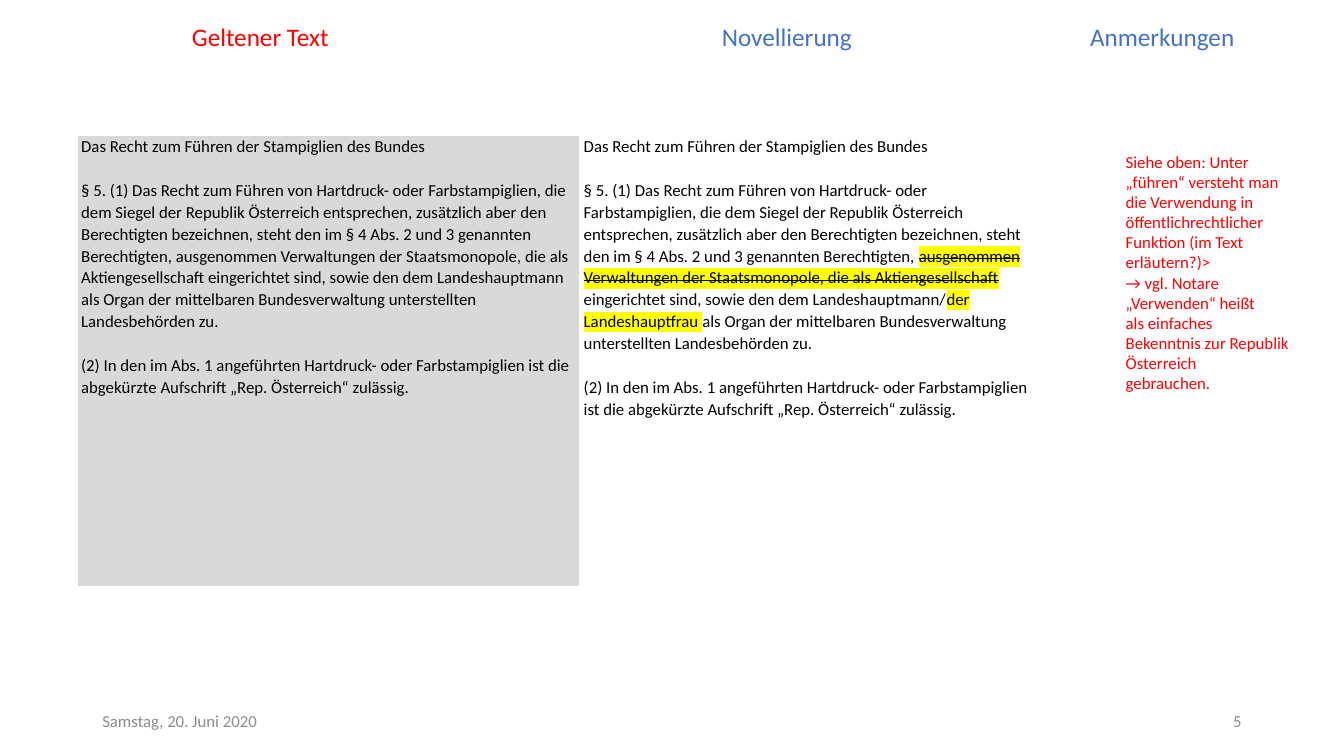
from lxml import etree
from pptx import Presentation
from pptx.dml.color import RGBColor
from pptx.enum.text import MSO_ANCHOR, PP_ALIGN
from pptx.oxml.ns import qn
from pptx.util import Pt

LEFT, RIGHT = PP_ALIGN.LEFT, PP_ALIGN.RIGHT
TOP, MIDDLE = MSO_ANCHOR.TOP, MSO_ANCHOR.MIDDLE

FONT = "Calibri"
BLACK, WHITE, RED, BLUE = "000000", "FFFFFF", "FF0000", "4472C4"
GREY_TEXT, GREY_FILL, YELLOW = "8C8C8C", "D9D9D9", "FFFF00"

TITLE = "Das Recht zum Führen der Stampiglien des Bundes"
RIGHT_HOLDERS = (
    "§ 5. (1) Das Recht zum Führen von Hartdruck- oder Farbstampiglien, die dem "
    "Siegel der Republik Österreich entsprechen, zusätzlich aber den Berechtigten "
    "bezeichnen, steht den im § 4 Abs. 2 und 3 genannten Berechtigten, "
)
EXCEPTION = "ausgenommen Verwaltungen der Staatsmonopole, die als Aktiengesellschaft "
GOVERNOR = "eingerichtet sind, sowie den dem Landeshauptmann"
AUTHORITIES = (
    "als Organ der mittelbaren Bundesverwaltung unterstellten Landesbehörden zu."
)
INSCRIPTION = (
    "(2) In den im Abs. 1 angeführten Hartdruck- oder Farbstampiglien ist die "
    "abgekürzte Aufschrift „Rep. Österreich“ zulässig."
)

# Each paragraph is a list of (text, style) spans.
CURRENT_LAW = [
    [(TITLE, {})],
    [(f"{RIGHT_HOLDERS}{EXCEPTION}{GOVERNOR} {AUTHORITIES}", {})],
    [(INSCRIPTION, {})],
]
AMENDED_LAW = [
    [(TITLE, {})],
    [
        (RIGHT_HOLDERS, {}),
        (EXCEPTION, {"strike": True, "highlight": YELLOW}),
        (f"{GOVERNOR}/", {}),
        ("der Landeshauptfrau ", {"highlight": YELLOW}),
        (AUTHORITIES, {}),
    ],
    [(INSCRIPTION, {})],
]
HEADINGS = [[
    ("Geltener Text\t", {"size": 18, "color": RED}),
    ("Novellierung\tAnmerkungen", {"size": 18, "color": BLUE}),
]]
REMARKS = [
    "Siehe oben: Unter „führen“ versteht man die Verwendung in "
    "öffentlichrechtlicher Funktion (im Text erläutern?)>\n→ vgl. Notare",
    "„Verwenden“ heißt",
    "als einfaches Bekenntnis zur Republik Österreich \ngebrauchen.",
]


def rgb(color):
    return RGBColor.from_string(color)


def add_color(parent, tag, color):
    """Append a DrawingML element that holds one RGB colour."""
    holder = etree.SubElement(parent, qn(tag))
    etree.SubElement(holder, qn("a:srgbClr"), val=color)


def add_span(para, text, size=12, color=BLACK, strike=False, highlight=None):
    """Add a run; each newline in it becomes a line break of the same size."""
    for index, line in enumerate(text.split("\n")):
        if index:
            para.add_line_break()
            etree.SubElement(para._p[-1], qn("a:rPr"), sz=str(size * 100))
        span = para.add_run()
        span.text = line
        span.font.size = Pt(size)
        span.font.color.rgb = rgb(color)
        properties = span._r.get_or_add_rPr()
        if strike:
            properties.set("strike", "sngStrike")
        if highlight:
            add_color(properties, "a:highlight", highlight)
        span.font.name = FONT


def fill_text(frame, paragraphs, align=LEFT, line_spacing=None, gap=0):
    for index, spans in enumerate(paragraphs):
        para = frame.add_paragraph() if index else frame.paragraphs[0]
        para.alignment = align
        if line_spacing:
            para.line_spacing = line_spacing
        if index and gap:
            para.space_before = Pt(gap)
        for text, style in spans:
            add_span(para, text, **style)


def add_text(page, left, top, width, height, paragraphs, align=LEFT, anchor=TOP):
    box = page.shapes.add_textbox(Pt(left), Pt(top), Pt(width), Pt(height))
    box.text_frame.word_wrap = True
    box.text_frame.vertical_anchor = anchor
    fill_text(box.text_frame, paragraphs, align)
    return box


def add_tab_stops(para, positions):
    tabs = etree.SubElement(para._p.get_or_add_pPr(), qn("a:tabLst"))
    for position in positions:
        etree.SubElement(tabs, qn("a:tab"), pos=str(Pt(position)), algn="l")


def style_cell(cell, fill=None):
    properties = cell._tc.get_or_add_tcPr()
    for side in "LRTB":
        border = etree.SubElement(properties, qn(f"a:ln{side}"), w=str(Pt(1)))
        add_color(border, "a:solidFill", WHITE)
    if fill:
        cell.fill.solid()
        cell.fill.fore_color.rgb = rgb(fill)
    else:
        cell.fill.background()


def add_law_table(page):
    widths, heights = (359, 326), (102, 322.5)
    table = page.shapes.add_table(
        2, 2, Pt(55), Pt(-5.5), Pt(sum(widths)), Pt(sum(heights))
    ).table
    table.first_row = table.horz_banding = False
    for column, width in zip(table.columns, widths):
        column.width = Pt(width)
    for row, height in zip(table.rows, heights):
        row.height = Pt(height)
    for column, (law, fill) in enumerate(
        [(CURRENT_LAW, GREY_FILL), (AMENDED_LAW, None)]
    ):
        style_cell(table.cell(0, column))
        cell = table.cell(1, column)
        style_cell(cell, fill)
        cell.margin_left = cell.margin_right = Pt(3)
        cell.margin_top = cell.margin_bottom = 0
        fill_text(cell.text_frame, law, line_spacing=1.07, gap=15.7)


def main():
    deck = Presentation()
    deck.slide_width, deck.slide_height = Pt(960), Pt(540)
    page = deck.slides.add_slide(deck.slide_layouts[6])

    footer = {"color": GREY_TEXT}
    add_text(page, 66, 500.5, 216, 28.75, [[("Samstag, 20. Juni 2020", footer)]],
             anchor=MIDDLE)
    add_text(page, 678, 500.5, 216, 28.75, [[("5", footer)]], RIGHT, MIDDLE)
    add_law_table(page)
    headings = add_text(page, 130, 11.5, 785, 29, HEADINGS)
    add_tab_stops(headings.text_frame.paragraphs[0], (378.5, 641.5))
    add_text(page, 797, 104.5, 132, 181.5,
             [[(remark, {"color": RED})] for remark in REMARKS])

    deck.save("out.pptx")


if __name__ == "__main__":
    main()
